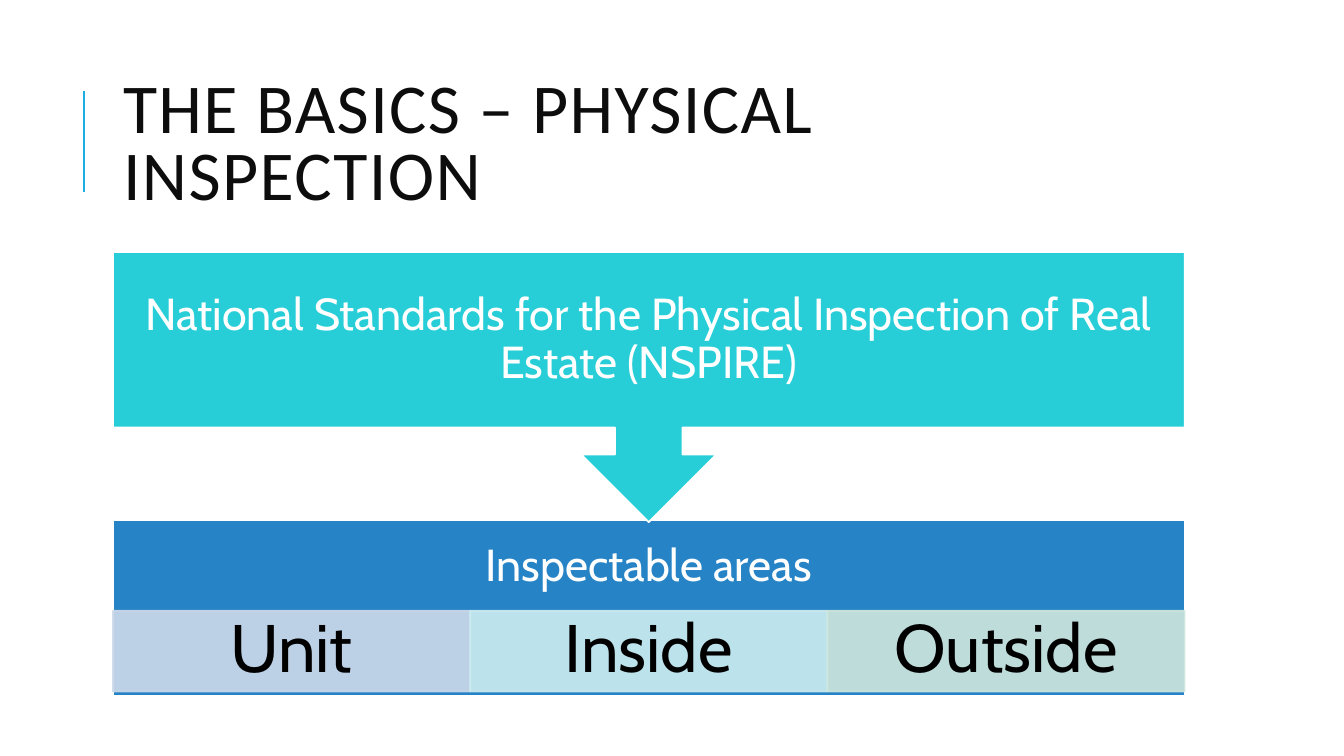
from lxml import etree
from pptx import Presentation
from pptx import util as u
from pptx.dml import color
from pptx.enum import shapes, text
from pptx.oxml import ns


def paint(fill, value, opacity=100):
    fill.solid()
    fill.fore_color.rgb = color.RGBColor.from_string(value)
    if opacity < 100:
        for node in fill._xPr.iter(ns.qn("a:srgbClr")):
            etree.SubElement(node, ns.qn("a:alpha"), val=str(opacity * 1000))


def write(frame, words, *, size, ink="FFFFFF", font="Cabin", spacing=0.9,
          align=text.PP_ALIGN.CENTER, insets=(0.25, 0.25, 0.25, 0.25), tracking=0):
    frame.word_wrap = True
    frame.auto_size = text.MSO_AUTO_SIZE.NONE
    frame.vertical_anchor = text.MSO_ANCHOR.MIDDLE
    (frame.margin_left, frame.margin_top,
     frame.margin_right, frame.margin_bottom) = map(u.Inches, insets)
    paragraph = frame.paragraphs[0]
    paragraph.alignment = align
    paragraph.line_spacing = spacing
    run = paragraph.add_run()
    run.text = words
    run.font.size = u.Pt(size)
    run.font.name = font
    paint(run.font.fill, ink)
    if tracking:
        run._r.get_or_add_rPr().set("spc", str(tracking * 100))


class Deck:
    accent = "1CADE4"
    outline = 1.25

    def __init__(self):
        self.presentation = Presentation()
        self.presentation.slide_width = u.Inches(13.33)
        self.presentation.slide_height = u.Inches(7.5)
        self.slide = self.presentation.slides.add_slide(self.presentation.slide_layouts[5])

    def title(self, words, left, top, width, height):
        shape = self.slide.shapes.title
        shape.left, shape.top, shape.width, shape.height = map(
            u.Inches, (left, top, width, height))
        write(shape.text_frame, words, size=50, ink="0D0D0D", font="Calibri", spacing=0.8,
              align=text.PP_ALIGN.LEFT, insets=(0.1, 0.05, 0.1, 0.05), tracking=1)

    def rule(self, x, top, bottom):
        line = self.slide.shapes.add_connector(
            shapes.MSO_CONNECTOR.STRAIGHT, *map(u.Inches, (x, bottom, x, top)))
        paint(line.line.fill, self.accent)
        line.line.width = u.Pt(1.5)
        etree.SubElement(line._element.spPr, ns.qn("a:effectLst"))

    def block(self, words, left, top, width, height, fill, *, edge="FFFFFF", opacity=100,
              kind=shapes.MSO_SHAPE.RECTANGLE, **style):
        shape = self.slide.shapes.add_shape(kind, *map(u.Inches, (left, top, width, height)))
        shape.shadow.inherit = False
        paint(shape.fill, fill, opacity)
        paint(shape.line.fill, edge, opacity)
        shape.line.width = u.Pt(self.outline)
        write(shape.text_frame, words, **style)
        return shape


def main():
    deck = Deck()
    left, width = 1.12, 10.63
    deck.rule(0.83, 0.9, 1.9)
    deck.title("THE BASICS – PHYSICAL INSPECTION", left, 0.64, width, 1.64)

    areas_top, heading_height, area_height = 5.16, 0.94, 0.8
    deck.block("Inspectable areas", left, areas_top, width, 1.74, "2683C6", size=32,
               insets=(0.25, 0.25, 0.25, 0.25 + area_height))

    areas = [("Unit", "CDD9EA"), ("Inside", "CDEDF0"), ("Outside", "CFE7DD")]
    area_width = width / len(areas)
    for index, (name, fill) in enumerate(areas):
        deck.block(name, left + index * area_width, areas_top + heading_height - 0.04,
                   area_width, area_height, fill, edge=fill, opacity=90,
                   size=48, ink="000000", insets=(0.37, 0.07, 0.37, 0.07))

    callout = deck.block(
        "National Standards for the Physical Inspection of Real Estate (NSPIRE)",
        left, 2.5, width, 2.68, "27CED7", size=32,
        kind=shapes.MSO_SHAPE.DOWN_ARROW_CALLOUT)
    callout.adjustments[3] = 0.65

    deck.presentation.save("out.pptx")


if __name__ == "__main__":
    main()
